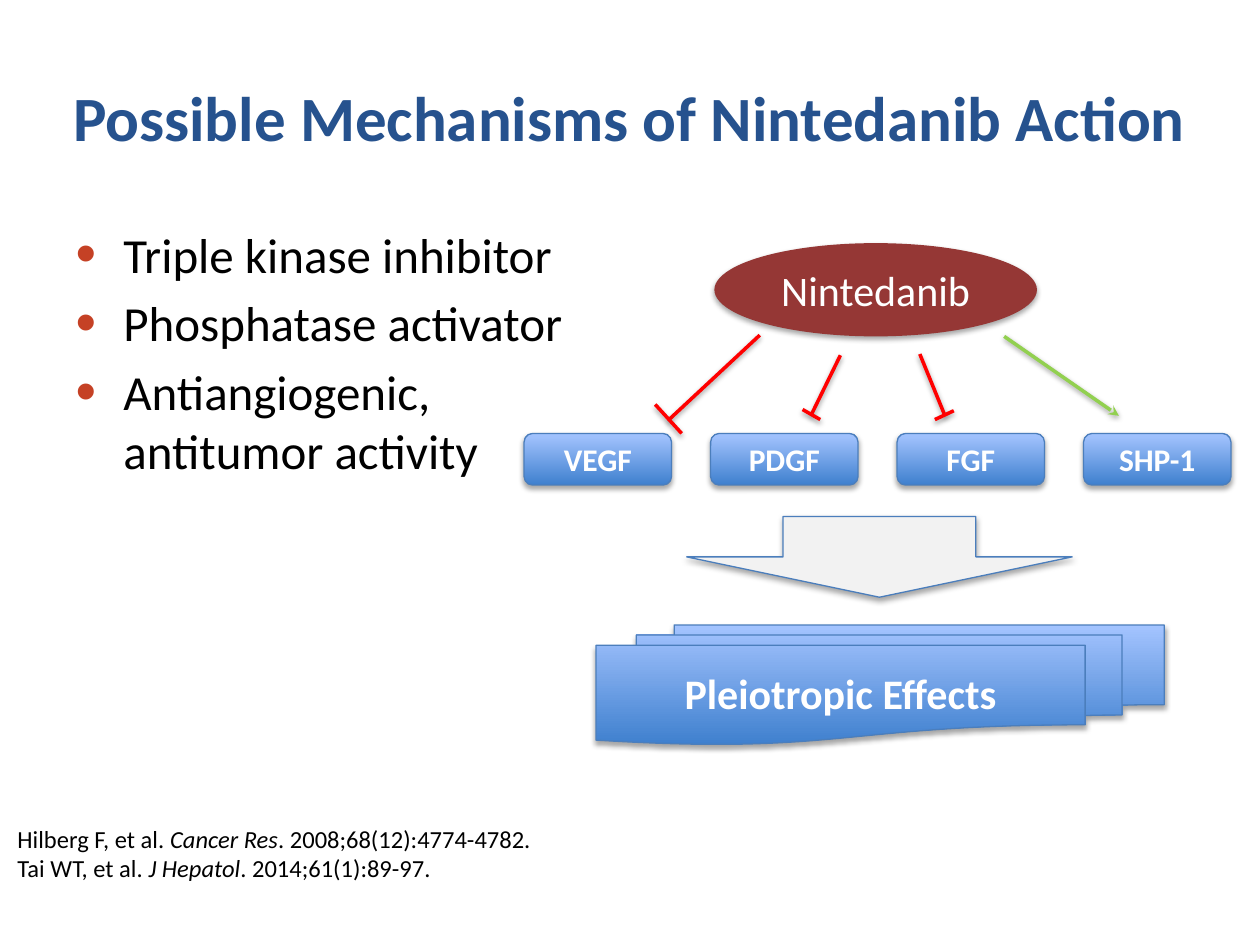
from lxml.etree import SubElement
from pptx import Presentation
from pptx.dml.color import RGBColor
from pptx.enum.shapes import MSO_CONNECTOR, MSO_SHAPE
from pptx.enum.text import MSO_ANCHOR, MSO_AUTO_SIZE, PP_ALIGN
from pptx.oxml.ns import qn
from pptx.util import Emu, Pt

EMU_PER_PX = 9144  # 100 px to the inch
COLORS = {
    "title": "26528E",
    "text": "000000",
    "bullet": "C54125",
    "white": "FFFFFF",
    "drug": "953735",
    "box_bottom": "3F80CE",
    "box_top": "A4C4FF",
    "outline": "4B7EBC",
    "arrow": "F2F2F2",
    "inhibit": "FF0000",
    "activate": "92D050",
}


def px(*lengths):
    return [Emu(length * EMU_PER_PX) for length in lengths]


def rgb(name):
    return RGBColor.from_string(COLORS[name])


def add_xml(parent, tag, **attributes):
    return SubElement(parent, qn(tag), {key: str(value) for key, value in attributes.items()})


class SlideBuilder:
    font = "Calibri"

    def __init__(self, presentation):
        self.slide = presentation.slides.add_slide(presentation.slide_layouts[1])

    def run(self, paragraph, text, size, color, bold=False, italic=False):
        run = paragraph.add_run()
        run.text = text
        run.font.name = self.font
        run.font.size = Pt(size)
        run.font.bold = bold
        run.font.italic = italic
        run.font.color.rgb = rgb(color)

    def place(self, shape, box):
        shape.left, shape.top, shape.width, shape.height = px(*box)

    def shadow(self, shape, opacity, blur, distance):
        """Add a soft black shadow straight below; call after the line is set."""
        properties = shape._element.spPr
        effects = properties.find(qn("a:effectLst"))
        if effects is None:
            effects = add_xml(properties, "a:effectLst")
        outer = add_xml(effects, "a:outerShdw", blurRad=Pt(blur), dist=Pt(distance),
                        dir=90 * 60000, rotWithShape=0)
        black = add_xml(outer, "a:srgbClr", val=COLORS["text"])
        add_xml(black, "a:alpha", val=opacity * 1000)

    def title(self, text, box):
        title = self.slide.shapes.title
        self.place(title, box)
        frame = title.text_frame
        frame.auto_size = MSO_AUTO_SIZE.NONE
        frame.vertical_anchor = MSO_ANCHOR.MIDDLE
        paragraph = frame.paragraphs[0]
        paragraph.alignment = PP_ALIGN.LEFT
        self.run(paragraph, text, 36, "title", bold=True)

    def bullets(self, items, box, size=28, indent=38):
        body = self.slide.placeholders[1]
        self.place(body, box)
        frame = body.text_frame
        frame.auto_size = MSO_AUTO_SIZE.NONE
        for index, item in enumerate(items):
            paragraph = frame.add_paragraph() if index else frame.paragraphs[0]
            properties = paragraph._p.get_or_add_pPr()
            margin = px(indent)[0]
            properties.set("marL", str(margin))
            properties.set("indent", str(-margin))
            color = add_xml(properties, "a:buClr")
            add_xml(color, "a:srgbClr", val=COLORS["bullet"])
            add_xml(properties, "a:buSzPct", val=120000)
            add_xml(properties, "a:buFont", typeface="Arial")
            add_xml(properties, "a:buChar", char="•")
            paragraph.space_before = Pt(size * 0.2 if index else 0)
            self.run(paragraph, item, size, "text")

    def shape(self, kind, box, fill=None, outline="outline", text="", size=18, bold=True):
        """Add a shadowed shape; without a fill colour it gets the blue gradient."""
        shape = self.slide.shapes.add_shape(kind, *px(*box))
        if fill:
            shape.fill.solid()
            shape.fill.fore_color.rgb = rgb(fill)
        else:
            shape.fill.gradient()
            shape.fill.gradient_angle = 90
            for stop, color in zip(shape.fill.gradient_stops, ("box_bottom", "box_top")):
                stop.color.rgb = rgb(color)
        if outline:
            shape.line.color.rgb = rgb(outline)
            shape.line.width = Pt(0.75)
        else:
            shape.line.fill.background()
        shape.shadow.inherit = False
        self.shadow(shape, 35, 3.1, 1.8)
        if text:
            shape.text_frame.vertical_anchor = MSO_ANCHOR.MIDDLE
            paragraph = shape.text_frame.paragraphs[0]
            paragraph.alignment = PP_ALIGN.CENTER
            self.run(paragraph, text, size, "white", bold=bold)

    def line(self, ends, color, shapes=None, head=None):
        shapes = shapes or self.slide.shapes
        connector = shapes.add_connector(MSO_CONNECTOR.STRAIGHT, *px(*ends))
        connector.line.color.rgb = rgb(color)
        connector.line.width = Pt(2)
        if head:
            add_xml(connector.line._ln, "a:tailEnd", type=head)
        self.shadow(connector, 38, 3.1, 1.6)

    def inhibitor(self, stem, bar):
        """Group a stem and its blocking bar."""
        group = self.slide.shapes.add_group_shape()
        for ends in (stem, bar):
            self.line(ends, "inhibit", group.shapes)

    def references(self, citations, box):
        frame = self.slide.shapes.add_textbox(*px(*box)).text_frame
        frame.word_wrap = False
        frame.auto_size = MSO_AUTO_SIZE.SHAPE_TO_FIT_TEXT
        for index, (authors, journal, issue) in enumerate(citations):
            paragraph = frame.add_paragraph() if index else frame.paragraphs[0]
            self.run(paragraph, authors, 14, "text")
            self.run(paragraph, journal, 14, "text", italic=True)
            self.run(paragraph, issue, 14, "text")


def main():
    presentation = Presentation()
    presentation.slide_width, presentation.slide_height = px(1000, 750)
    builder = SlideBuilder(presentation)

    builder.title("Possible Mechanisms of Nintedanib Action", (48, 30, 950, 125))
    builder.bullets(
        ["Triple kinase inhibitor", "Phosphatase activator", "Antiangiogenic, antitumor activity"],
        (50, 173, 434, 339),
    )

    builder.shape(MSO_SHAPE.OVAL, (567, 193, 256, 74), fill="drug", outline=None,
                  text="Nintedanib", size=24, bold=False)
    for column, target in enumerate(["VEGF", "PDGF", "FGF", "SHP-1"]):
        builder.shape(MSO_SHAPE.ROUNDED_RECTANGLE, (416 + 148 * column, 344, 117, 41), text=target)

    builder.inhibitor(stem=(667, 282, 644, 329), bar=(637, 325, 651, 333))
    builder.inhibitor(stem=(730, 281, 750, 330), bar=(757, 326, 742, 333))
    builder.inhibitor(stem=(603, 266, 531, 333), bar=(520, 321, 541, 344))
    builder.line((797, 267, 888, 330), "activate", head="stealth")

    builder.shape(MSO_SHAPE.DOWN_ARROW, (545, 410, 306, 64), fill="arrow")
    builder.references(
        [
            ("Hilberg F, et al. ", "Cancer Res", ". 2008;68(12):4774-4782."),
            ("Tai WT, et al. ", "J Hepatol", ". 2014;61(1):89-97."),
        ],
        (4, 649, 431, 57),
    )
    builder.shape(MSO_SHAPE.FLOWCHART_MULTIDOCUMENT, (473, 496, 451, 95),
                  text="Pleiotropic Effects", size=24)

    presentation.save("out.pptx")


if __name__ == "__main__":
    main()
